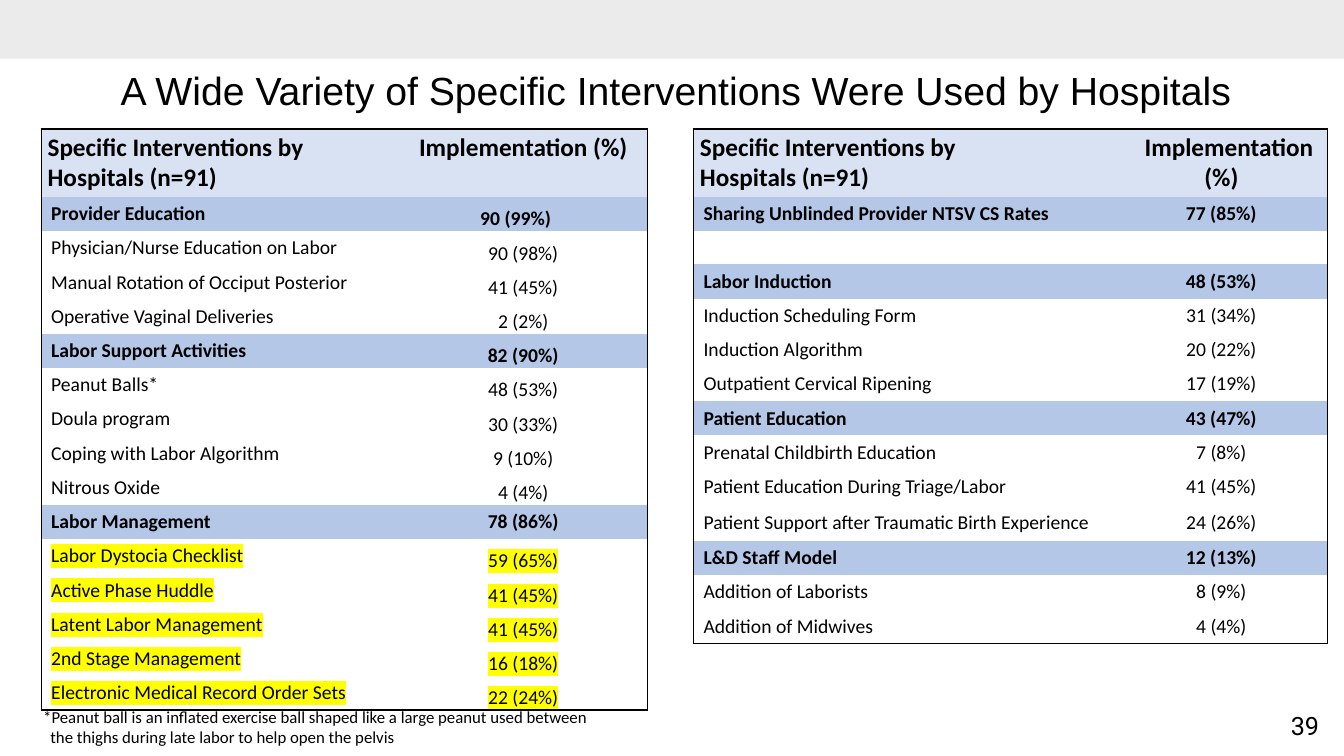
from dataclasses import dataclass

from lxml.etree import SubElement
from pptx import Presentation
from pptx.dml.color import RGBColor
from pptx.enum.shapes import MSO_SHAPE
from pptx.enum.text import MSO_ANCHOR, MSO_AUTO_SIZE, PP_ALIGN
from pptx.oxml.ns import qn
from pptx.util import Cm, Pt

COLOURS = {
    "text": "000000",
    "band": "E3E3E3",
    "header": "D9E2F3",
    "group": "B4C7E7",
    "highlight": "FFFF00",
}
PLAIN_TABLE_STYLE = "{2D5ABB26-0587-4C30-8999-92F81FD0307C}"
HEADER_HEIGHT, ROW_HEIGHT, TALL_ROW_HEIGHT = 1.7, 0.84, 0.93
HEADER_MARGINS = (0.16, 0.08, 0.16, 0.08)
LABEL_MARGINS = (0.25, 0.13, 0.25, 0.13)
HEADINGS = ("Specific Interventions by\vHospitals (n=91)", "Implementation (%)")
TALL_LABEL = "Patient Support after Traumatic Birth Experience"

# Each row: label, value, kind
LEFT_ROWS = [
    ("Provider Education", "90 (99%)", "group"),
    ("Physician/Nurse Education on Labor", "90 (98%)", "item"),
    ("Manual Rotation of Occiput Posterior", "41 (45%)", "item"),
    ("Operative Vaginal Deliveries", "2 (2%)", "item"),
    ("Labor Support Activities", "82 (90%)", "group"),
    ("Peanut Balls*", "48 (53%)", "item"),
    ("Doula program", "30 (33%)", "item"),
    ("Coping with Labor Algorithm", "9 (10%)", "item"),
    ("Nitrous Oxide", "4 (4%)", "item"),
    ("Labor Management", "78 (86%)", "group"),
    ("Labor Dystocia Checklist", "59 (65%)", "highlight"),
    ("Active Phase Huddle", "41 (45%)", "highlight"),
    ("Latent Labor Management", "41 (45%)", "highlight"),
    ("2nd Stage Management", "16 (18%)", "highlight"),
    ("Electronic Medical Record Order Sets", "22 (24%)", "highlight"),
]
RIGHT_ROWS = [
    ("Sharing Unblinded Provider NTSV CS Rates", "77 (85%)", "group"),
    ("", "", "item"),
    ("Labor Induction", "48 (53%)", "group"),
    ("Induction Scheduling Form", "31 (34%)", "item"),
    ("Induction Algorithm", "20 (22%)", "item"),
    ("Outpatient Cervical Ripening", "17 (19%)", "item"),
    ("Patient Education", "43 (47%)", "group"),
    ("Prenatal Childbirth Education", "7 (8%)", "item"),
    ("Patient Education During Triage/Labor", "41 (45%)", "item"),
    (TALL_LABEL, "24 (26%)", "item"),
    ("L&D Staff Model", "12 (13%)", "group"),
    ("Addition of Laborists", "8 (9%)", "item"),
    ("Addition of Midwives", "4 (4%)", "item"),
]


@dataclass
class SlideBuilder:
    page: object
    font: str = "Calibri"

    def format(self, paragraph, size, font=None, bold=False, align=PP_ALIGN.LEFT):
        paragraph.alignment = align
        paragraph.font.size = Pt(size)
        paragraph.font.name = font or self.font
        paragraph.font.bold = bold
        paragraph.font.color.rgb = RGBColor.from_string(COLOURS["text"])

    def band(self, width, height):
        band = self.page.shapes.add_shape(MSO_SHAPE.RECTANGLE, 0, 0, width, height)
        band.shadow.inherit = False
        band.line.fill.background()
        band.fill.solid()
        band.fill.fore_color.rgb = RGBColor.from_string(COLOURS["band"])
        colour = band._element.spPr.find(qn("a:solidFill"))[0]
        SubElement(colour, qn("a:alpha"), val="70000")

    def title(self, text, left, top, width, height):
        title = self.page.shapes.title
        title.left, title.top, title.width, title.height = map(Cm, (left, top, width, height))
        frame = title.text_frame
        frame.text = text
        frame.auto_size = MSO_AUTO_SIZE.NONE
        frame.vertical_anchor = MSO_ANCHOR.TOP
        self.format(frame.paragraphs[0], 28, font="Arial", align=PP_ALIGN.CENTER)

    def text(self, text, left, top, width, height, size, font=None, wrap=True,
             anchor=MSO_ANCHOR.TOP, hanging=0):
        box = self.page.shapes.add_textbox(*map(Cm, (left, top, width, height)))
        frame = box.text_frame
        frame.text = text
        frame.word_wrap = wrap
        frame.vertical_anchor = anchor
        paragraph = frame.paragraphs[0]
        if hanging:
            properties = paragraph._p.get_or_add_pPr()
            properties.set("marL", str(Cm(hanging)))
            properties.set("indent", str(-Cm(hanging)))
        self.format(paragraph, size, font)

    def borders(self, cell, sides):
        properties = cell._tc.get_or_add_tcPr()
        for side in sides:
            line = SubElement(properties, qn(f"a:ln{side}"), w=str(Pt(1)))
            fill = SubElement(line, qn("a:solidFill"))
            SubElement(fill, qn("a:srgbClr"), val=COLOURS["text"])

    def cell(self, cell, text, kind, sides, margins, anchor, align):
        self.borders(cell, sides)
        if kind in ("header", "group"):
            cell.fill.solid()
            cell.fill.fore_color.rgb = RGBColor.from_string(COLOURS[kind])
        else:
            cell.fill.background()
        (cell.margin_left, cell.margin_top,
         cell.margin_right, cell.margin_bottom) = map(Cm, margins)
        cell.vertical_anchor = anchor
        cell.text = text
        paragraph = cell.text_frame.paragraphs[0]
        if kind == "highlight":
            marker = SubElement(paragraph.runs[0]._r.get_or_add_rPr(), qn("a:highlight"))
            SubElement(marker, qn("a:srgbClr"), val=COLOURS["highlight"])
        self.format(paragraph, 18 if kind == "header" else 14,
                    bold=kind in ("header", "group"), align=align)

    def table(self, rows, left, top, column_widths, anchor):
        """Draw headings and rows inside one outer frame; return the table."""
        rows = [(*HEADINGS, "header"), *rows]
        heights = [HEADER_HEIGHT if kind == "header"
                   else TALL_ROW_HEIGHT if label == TALL_LABEL else ROW_HEIGHT
                   for label, _, kind in rows]
        table = self.page.shapes.add_table(
            len(rows), 2, Cm(left), Cm(top), Cm(sum(column_widths)), Cm(sum(heights))).table
        table.first_row = table.horz_banding = False
        table._tbl.tblPr.find(qn("a:tableStyleId")).text = PLAIN_TABLE_STYLE
        for column, width in zip(table.columns, column_widths):
            column.width = Cm(width)
        for index, (label, value, kind) in enumerate(rows):
            table.rows[index].height = Cm(heights[index])
            edge = "T" if index == 0 else "B" if index == len(rows) - 1 else ""
            label_margins, value_margins = LABEL_MARGINS, (0, 0, 0, 0)
            row_anchor = MSO_ANCHOR.MIDDLE if label == "Labor Management" else anchor
            if kind == "header":
                label_margins = value_margins = HEADER_MARGINS
                row_anchor = MSO_ANCHOR.TOP
            elif not label:
                label_margins = value_margins
            self.cell(table.cell(index, 0), label, kind, "L" + edge,
                      label_margins, row_anchor, PP_ALIGN.LEFT)
            self.cell(table.cell(index, 1), value, kind, "R" + edge,
                      value_margins, row_anchor, PP_ALIGN.CENTER)
        return table


def main():
    deck = Presentation()
    deck.slide_width, deck.slide_height = Cm(33.87), Cm(19.05)
    slide = SlideBuilder(deck.slides.add_slide(deck.slide_layouts[5]))
    slide.band(deck.slide_width, Cm(1.48))
    slide.title("A Wide Variety of Specific Interventions Were Used by Hospitals",
                0.89, 1.55, 32.28, 1.45)

    interventions = slide.table(LEFT_ROWS, 1.04, 3.25, (9.02, 6.25), MSO_ANCHOR.BOTTOM)
    interventions.cell(1, 1).margin_right = Cm(0.38)
    more_interventions = slide.table(RIGHT_ROWS, 17.48, 3.25, (10.62, 5.36), MSO_ANCHOR.MIDDLE)
    heading = more_interventions.cell(0, 1).text_frame.paragraphs[0]
    heading._p.get_or_add_pPr().set("indent", str(Cm(0.38)))

    slide.text("*Peanut ball is an inflated exercise ball shaped like a large peanut used between"
               "\vthe thighs during late labor to help open the pelvis",
               0.84, 17.68, 15.27, 1.27, 12, anchor=MSO_ANCHOR.MIDDLE, hanging=0.18)
    slide.text("39", 32.28, 17.78, 1.3, 1.02, 18, font="Roboto", wrap=False)
    deck.save("out.pptx")


if __name__ == "__main__":
    main()
